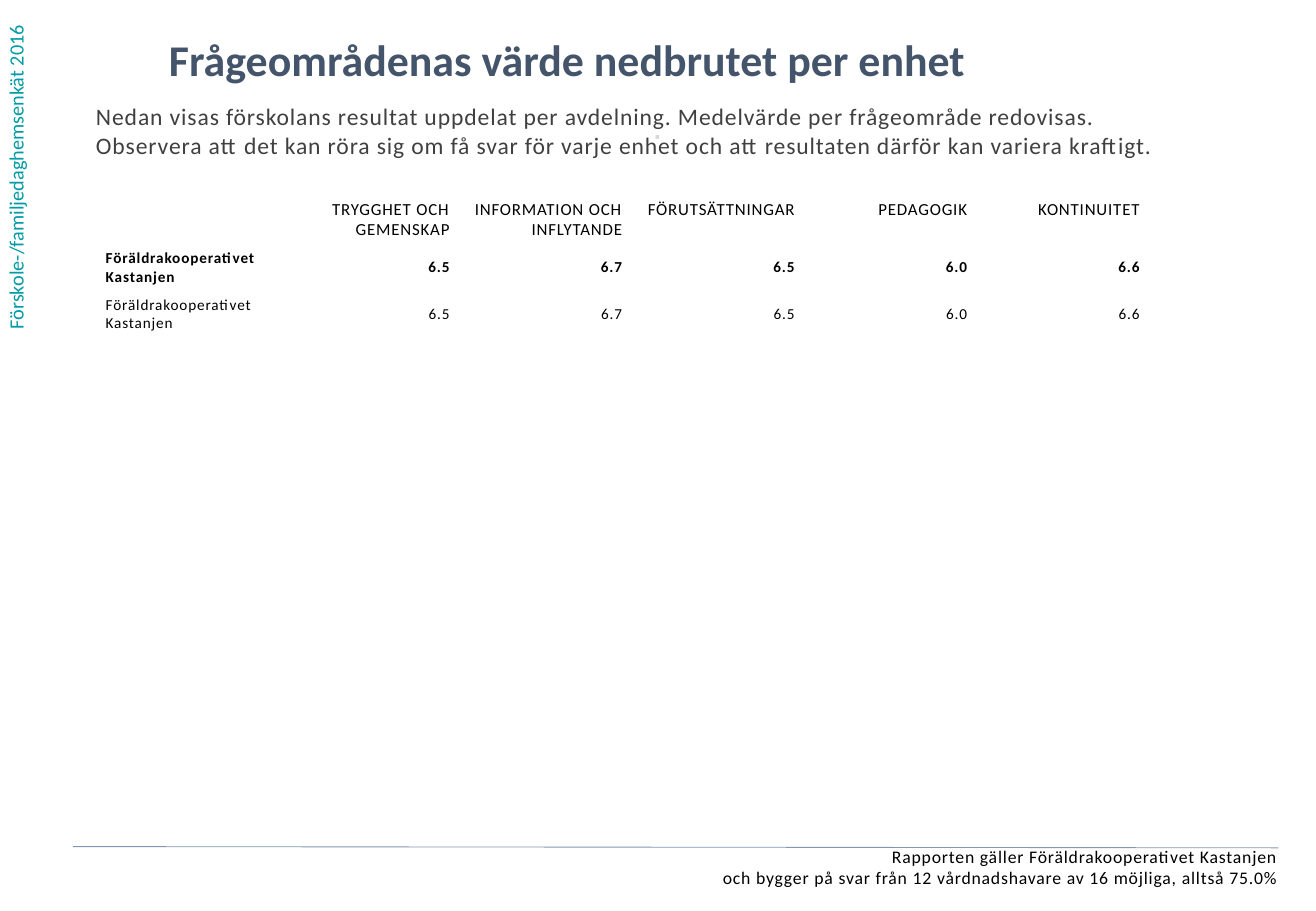
from lxml.etree import SubElement
from pptx import Presentation
from pptx.dml.color import RGBColor
from pptx.enum.shapes import MSO_CONNECTOR
from pptx.enum.text import MSO_ANCHOR, MSO_AUTO_SIZE, PP_ALIGN
from pptx.oxml import parse_xml
from pptx.oxml.ns import nsdecls, qn
from pptx.util import Inches, Pt

COLORS = {
    "survey": "009BA4",
    "title": "44546A",
    "intro": "404040",
    "text": "000000",
    "dot": "D2D9E2",
    "rule": "8497B0",
    "paper": "FFFFFF",
}
FONT = "Calibri"
LETTER_SPACING = "50"  # hundredths of a point

HEADINGS = ["", "TRYGGHET OCH GEMENSKAP", "INFORMATION OCH INFLYTANDE",
            "FÖRUTSÄTTNINGAR", "PEDAGOGIK", "KONTINUITET", ""]
UNIT_SCORES = ["Föräldrakooperativet Kastanjen", "6.5", "6.7", "6.5", "6.0", "6.6", ""]
SCORE_ROWS = [HEADINGS, UNIT_SCORES, UNIT_SCORES]


def color(name):
    return RGBColor.from_string(COLORS[name])


def style_text(frame, size, color_name, bold=False, align=PP_ALIGN.LEFT, spaced=True):
    for paragraph in frame.paragraphs:
        paragraph.alignment = align
        font = paragraph.font
        font.name, font.size, font.bold = FONT, Pt(size), bold
        font.color.rgb = color(color_name)
        if spaced:
            for run in paragraph.runs:
                run._r.get_or_add_rPr().set("spc", LETTER_SPACING)


def clear_insets(frame):
    frame.margin_left = frame.margin_right = frame.margin_top = frame.margin_bottom = 0


def add_text(slide, box, text, size, color_name, **style):
    frame = slide.shapes.add_textbox(*map(Inches, box)).text_frame
    frame.word_wrap = True
    clear_insets(frame)
    frame.text = text
    style_text(frame, size, color_name, **style)


def add_survey_name(slide):
    label = slide.shapes.add_textbox(Inches(-0.02), 0, Inches(0.4), Inches(2.81))
    frame = label.text_frame
    frame.text = "Förskole-/familjedaghemsenkät 2016"
    frame.word_wrap = True
    frame._txBody.find(qn("a:bodyPr")).set("vert", "vert270")
    style_text(frame, 12, "survey", spaced=False)


def set_title(slide, text):
    title = slide.shapes.title
    title.left, title.top = Inches(1.39), Inches(0.27)
    title.width, title.height = Inches(8.34), Inches(0.57)
    frame = title.text_frame
    frame.text = text
    frame.auto_size = MSO_AUTO_SIZE.NONE
    frame.vertical_anchor = MSO_ANCHOR.TOP
    clear_insets(frame)
    style_text(frame, 26, "title", bold=True, spaced=False)


def add_borders(cell):
    properties = cell._tc.get_or_add_tcPr()
    for position, side in enumerate(("lnL", "lnR", "lnT", "lnB")):
        properties.insert(position, parse_xml(
            f'<a:{side} {nsdecls("a")} w="6350"><a:solidFill>'
            f'<a:srgbClr val="{COLORS["paper"]}"/></a:solidFill></a:{side}>'))


def fill_cell(cell, text, row, column):
    cell.fill.solid()
    cell.fill.fore_color.rgb = color("paper")
    add_borders(cell)
    is_heading = row == 0
    cell.vertical_anchor = MSO_ANCHOR.TOP if is_heading else MSO_ANCHOR.MIDDLE
    cell.margin_left = cell.margin_right = Inches(0.08)
    cell.margin_top = cell.margin_bottom = Inches(0.04 if text else 0)
    cell.text = text
    style_text(cell.text_frame, 10 if is_heading else 9, "text", bold=row == 1,
               align=PP_ALIGN.RIGHT if column else PP_ALIGN.LEFT)


def add_score_table(slide):
    frame = slide.shapes.add_table(len(SCORE_ROWS), len(HEADINGS), Inches(0.79),
                                   Inches(1.6), Inches(9.25), Inches(4.76))
    table = frame.table
    table.first_row = table.horz_banding = False
    for index, column in enumerate(table.columns):
        column.width = Inches(1.42 if index else 1.57)
    for r, values in enumerate(SCORE_ROWS):
        table.rows[r].height = Inches(0.11)  # rows grow to fit their text
        for c, value in enumerate(values):
            fill_cell(table.cell(r, c), value, r, c)


def add_footer_rule(slide):
    rule = slide.shapes.add_connector(MSO_CONNECTOR.STRAIGHT, Inches(0.6), Inches(6.97),
                                      Inches(10.52), Inches(6.98))
    rule.line.color.rgb = color("rule")
    rule.line.width = Pt(0.5)
    SubElement(rule._element.spPr, qn("a:effectLst"))


def main():
    presentation = Presentation()
    presentation.slide_width, presentation.slide_height = Inches(10.83), Inches(7.5)
    slide = presentation.slides.add_slide(presentation.slide_layouts[5])

    # Heading and introduction
    add_survey_name(slide)
    set_title(slide, "Frågeområdenas värde nedbrutet per enhet")
    add_text(slide, (0.79, 0.84, 9.46, 1.01),
             "Nedan visas förskolans resultat uppdelat per avdelning. "
             "Medelvärde per frågeområde redovisas.\v"
             "Observera att det kan röra sig om få svar för varje enhet "
             "och att resultaten därför kan variera kraftigt.",
             14, "intro")

    # Footer
    add_text(slide, (0.12, 6.96, 10.4, 0.43),
             "Rapporten gäller Föräldrakooperativet Kastanjen\v"
             "och bygger på svar från 12 vårdnadshavare av 16 möjliga, alltså 75.0%",
             10.5, "text", align=PP_ALIGN.RIGHT)
    add_text(slide, (3.87, 1.02, 3.08, 0.39), "⋅", 12, "dot",
             bold=True, align=PP_ALIGN.CENTER)

    # Scores per unit
    add_score_table(slide)
    add_footer_rule(slide)

    presentation.save("out.pptx")


if __name__ == "__main__":
    main()
